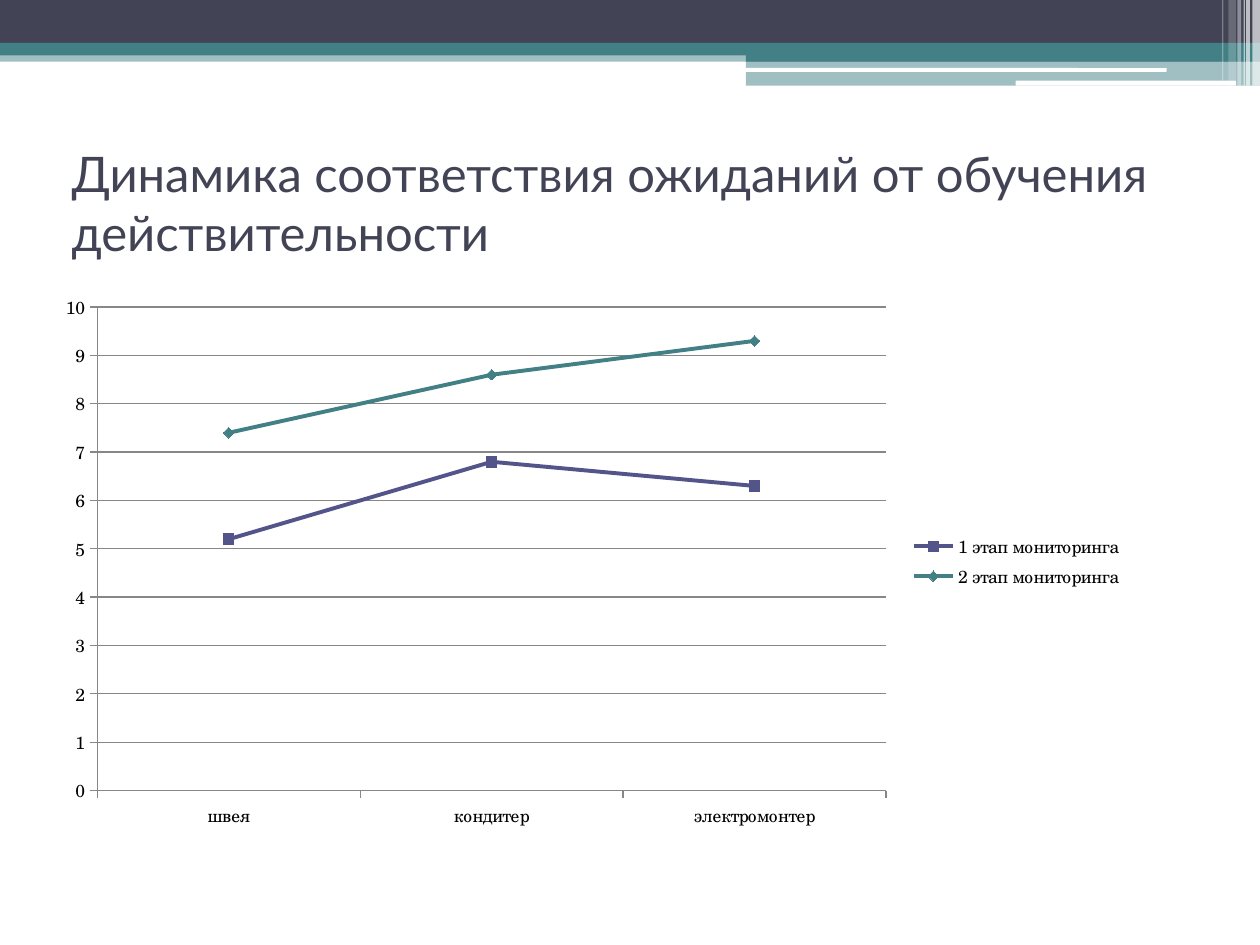
import pptx
import pptx.chart.data
import pptx.dml.color
import pptx.enum.chart
import pptx.enum.shapes
import pptx.enum.text
import pptx.oxml
import pptx.util
from pptx.util import Inches

RGBColor = pptx.dml.color.RGBColor
INK = RGBColor(0x42, 0x44, 0x56)
TEAL = RGBColor(0x43, 0x80, 0x86)
VIOLET = RGBColor(0x53, 0x54, 0x8A)
WHITE = RGBColor(0xFF, 0xFF, 0xFF)
BLACK = RGBColor(0, 0, 0)
GREY = RGBColor(0x87, 0x87, 0x87)

MARKER = pptx.enum.chart.XL_MARKER_STYLE
SHAPE = pptx.enum.shapes.MSO_SHAPE


class SlideBuilder:
    title_font = "Lato"
    chart_font = "TeX Gyre Schola"

    def __init__(self, slide):
        self.slide = slide

    def bar(self, box, color, opacity=100, kind=SHAPE.RECTANGLE):
        bar = self.slide.shapes.add_shape(kind, *map(Inches, box))
        bar.shadow.inherit = False
        bar.line.fill.background()
        bar.fill.solid()
        bar.fill.fore_color.rgb = color
        if opacity < 100:
            tint = bar.fill._xPr.find(".//" + pptx.oxml.ns.qn("a:srgbClr"))
            alpha = pptx.oxml.parse_xml(
                f'<a:alpha {pptx.oxml.ns.nsdecls("a")} val="{opacity * 1000}"/>')
            tint.append(alpha)

    def title(self, box, wording):
        frame = self.slide.shapes.add_textbox(*map(Inches, box)).text_frame
        frame.word_wrap = True
        frame.vertical_anchor = pptx.enum.text.MSO_ANCHOR.MIDDLE
        run = frame.paragraphs[0].add_run()
        run.text = wording
        run.font.name = self.title_font
        run.font.size = pptx.util.Pt(28)
        run.font.color.rgb = INK

    def line_chart(self, box, professions, stages):
        figures = pptx.chart.data.CategoryChartData()
        figures.categories = professions
        for name, scores, _, _ in stages:
            figures.add_series(name, scores)
        chart = self.slide.shapes.add_chart(
            pptx.enum.chart.XL_CHART_TYPE.LINE_MARKERS,
            *map(Inches, box), figures).chart
        chart.font.name = self.chart_font
        chart.font.size = pptx.util.Pt(10)
        chart.font.color.rgb = BLACK
        chart.has_title = False
        chart.has_legend = True
        chart.legend.position = pptx.enum.chart.XL_LEGEND_POSITION.RIGHT
        chart.legend.include_in_layout = False
        chart.plots[0].vary_by_categories = False

        scale = chart.value_axis
        scale.minimum_scale, scale.maximum_scale, scale.major_unit = 0, 10, 1
        scale.has_major_gridlines = True
        for edge in (scale, chart.category_axis, scale.major_gridlines):
            edge.format.line.color.rgb = GREY
            edge.format.line.width = pptx.util.Pt(0.75)

        for series, (_, _, color, symbol) in zip(chart.plots[0].series, stages):
            series.smooth = False
            series.format.line.color.rgb = color
            series.format.line.width = pptx.util.Pt(2.25)
            series.marker.style = symbol
            series.marker.size = 6
            series.marker.format.fill.solid()
            series.marker.format.fill.fore_color.rgb = color
            series.marker.format.line.color.rgb = color


def main():
    deck = pptx.Presentation()
    deck.slide_width, deck.slide_height = Inches(10), Inches(7.5)
    builder = SlideBuilder(deck.slides.add_slide(deck.slide_layouts[6]))

    builder.bar((0, 0.4, 10, 0.09), TEAL, 50)
    builder.bar((0, 0, 10, 0.34), INK)
    builder.bar((0, 0.34, 10, 0.1), TEAL)
    builder.bar((5.92, 0.39, 4.08, 0.1), TEAL)
    builder.bar((5.92, 0.48, 4.08, 0.2), TEAL, 50)
    for groove in ((5.91, 0.54, 3.35, 0.03), (8.06, 0.64, 1.75, 0.04)):
        builder.bar(groove, WHITE, kind=SHAPE.ROUNDED_RECTANGLE)
    for left, width, height, opacity in (
            (9.94, 0.06, 0.68, 65), (9.89, 0.03, 0.68, 65),
            (9.87, 0.01, 0.68, 60), (9.82, 0.03, 0.68, 40),
            (9.75, 0.06, 0.64, 20), (9.7, 0.01, 0.64, 30)):
        builder.bar((left, 0, width, height), WHITE, opacity)

    builder.title((0.47, 1.02, 9, 1.17),
                  "Динамика соответствия ожиданий от обучения действительности")
    builder.line_chart(
        (0.35, 2.25, 8.66, 4.41),
        ("швея", "кондитер", "электромонтер"),
        (("1 этап мониторинга", (5.2, 6.8, 6.3), VIOLET, MARKER.SQUARE),
         ("2 этап мониторинга", (7.4, 8.6, 9.3), TEAL, MARKER.DIAMOND)))
    deck.save("out.pptx")


if __name__ == "__main__":
    main()
